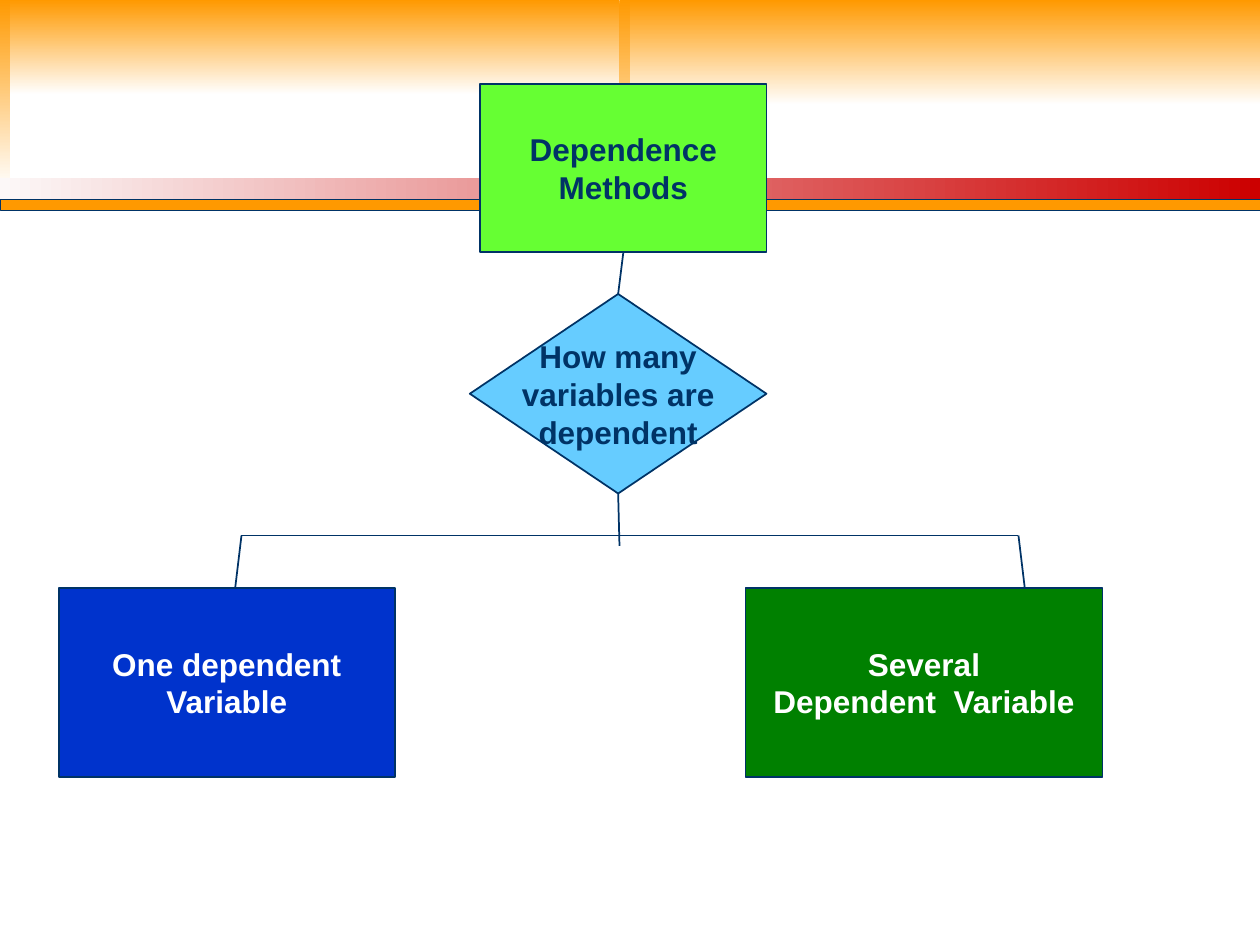
from lxml.etree import SubElement
from pptx import Presentation
from pptx.dml.color import RGBColor
from pptx.enum.shapes import MSO_CONNECTOR as Conn, MSO_SHAPE as Shape
from pptx.enum.text import MSO_ANCHOR as Anchor, PP_ALIGN as Align
from pptx.oxml.ns import qn
from pptx.util import Inches, Pt

# The grid: 120 columns by 90 rows, twelve to the inch
COLS, ROWS, CELL = 120, 90, Inches(1) / 12
HUES = {
    "orange": "FF9900", "red": "CC0000", "white": "FFFFFF", "pale": "FCF8F8",
    "navy": "003366", "lime": "66FF33", "sky": "66CCFF",
    "blue": "0033CC", "green": "008000",
}
TOP, BOTTOM = 0, 2  # connection sites
DOWN, LEFT = 270, 180  # gradient directions


def hue(name):
    return RGBColor.from_string(HUES[name])


def grid(*cells):
    return [round(cell * CELL) for cell in cells]


def edge(line, width=1):
    line.color.rgb = hue("navy")
    line.width = Pt(width)


def add_form(slide, kind, place):
    form = slide.shapes.add_shape(kind, *grid(*place))
    form.shadow.inherit = False
    return form


def add_fade(slide, place, start, end, angle=DOWN):
    form = add_form(slide, Shape.RECTANGLE, place)
    form.line.fill.background()
    form.fill.gradient()
    form.fill.gradient_angle = angle
    for stop, name in zip(form.fill.gradient_stops, (start, end)):
        stop.color.rgb = hue(name)


def add_node(slide, kind, place, fill, ink="navy", lines=(), width=1):
    form = add_form(slide, kind, place)
    form.fill.solid()
    form.fill.fore_color.rgb = hue(fill)
    edge(form.line, width)
    frame = form.text_frame
    frame.word_wrap = False
    frame.vertical_anchor = Anchor.MIDDLE
    for i, text in enumerate(lines):
        para = frame.add_paragraph() if i else frame.paragraphs[0]
        para.alignment = Align.CENTER
        run = para.add_run()
        run.text = text
        font = run.font
        font.name, font.size, font.bold = "Arial", Pt(18), True
        font.color.rgb = hue(ink)
    return form


def add_link(slide, start, end):
    link = slide.shapes.add_connector(Conn.STRAIGHT, *grid(*start, *end))
    edge(link.line)
    SubElement(link.element.spPr, qn("a:effectLst"))
    return link


def add_frame(slide):
    # Fading panels and bars across the top
    half = COLS / 2
    add_fade(slide, (0, 0, half - 1, 9), "orange", "white")
    add_node(slide, Shape.RECTANGLE, (0, 19, COLS, 1), "orange", width=0.25)
    for col in (half - 1, 0):
        add_fade(slide, (col, 0, 1, 18), "orange", "white")
    add_fade(slide, (0, 17, COLS, 2), "red", "pale", LEFT)
    add_fade(slide, (half, 0, half, 10), "orange", "white")


def add_tree(slide):
    # Root, question and the two answers
    root = add_node(slide, Shape.RECTANGLE, (45.75, 8, 27.25, 16), "lime",
                    lines=("Dependence", "Methods"))
    ask = add_node(slide, Shape.DIAMOND, (44.75, 28, 28.25, 19), "sky",
                   lines=("How many", "variables are", "dependent"))
    add_node(slide, Shape.RECTANGLE, (5.6, 56, 32, 18), "blue", "white",
             ("One dependent", "Variable"))
    add_node(slide, Shape.RECTANGLE, (71, 56, 34, 18), "green", "white",
             ("Several", "Dependent  Variable"))

    # Branch bar with its two legs
    mid, bar, foot = 59, 51, 56
    add_link(slide, (23, bar), (97, bar))
    add_link(slide, (23, bar), (22.4, foot))
    add_link(slide, (97, bar), (97.6, foot))

    # Trunk, joined to the root and the question
    stem = add_link(slide, (mid, 47), (mid, 52))
    stem.begin_connect(ask, BOTTOM)
    trunk = add_link(slide, (mid, 28), (mid, 24))
    trunk.begin_connect(ask, TOP)
    trunk.end_connect(root, BOTTOM)


def main():
    deck = Presentation()
    deck.slide_width, deck.slide_height = grid(COLS, ROWS)
    slide = deck.slides.add_slide(deck.slide_layouts[6])
    add_frame(slide)
    add_tree(slide)
    deck.save("out.pptx")


if __name__ == "__main__":
    main()
